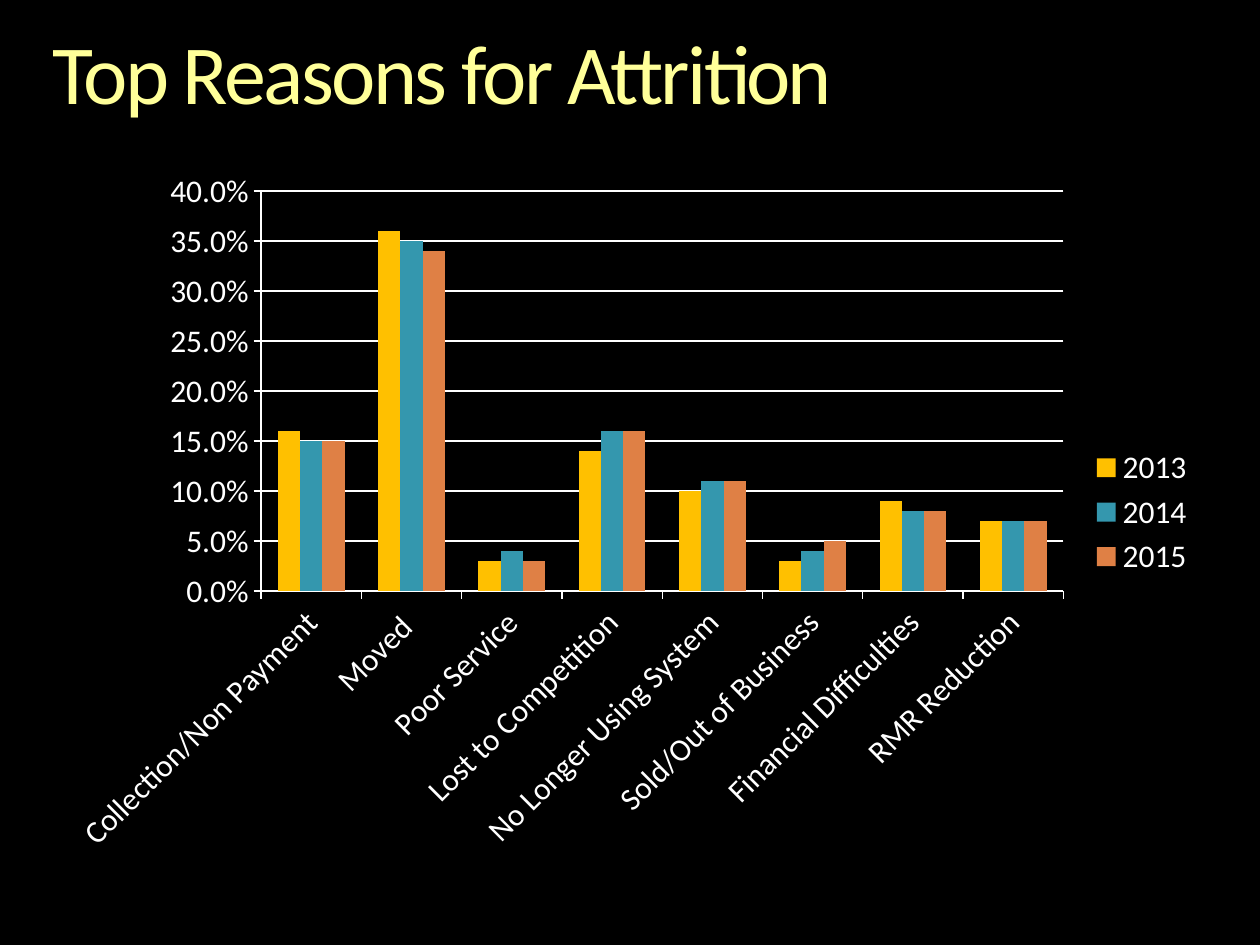
from dataclasses import dataclass

import pptx
import pptx.chart.data
import pptx.dml.color
import pptx.enum.chart
import pptx.oxml.ns
import pptx.util

Cm = pptx.util.Cm
Pt = pptx.util.Pt
RGBColor = pptx.dml.color.RGBColor

BLACK = RGBColor(0x00, 0x00, 0x00)
WHITE = RGBColor(0xFF, 0xFF, 0xFF)
PALE_YELLOW = RGBColor(0xFF, 0xFF, 0x99)
GOLD = RGBColor(0xFF, 0xC0, 0x00)
TEAL = RGBColor(0x34, 0x97, 0xAE)
ORANGE = RGBColor(0xDF, 0x80, 0x45)

FONT_NAME = "Calibri"
LEFT = Cm(1.06)
CONTENT_WIDTH = Cm(23.28)
PERCENT_FORMAT = "0.0%"


@dataclass(frozen=True)
class YearSeries:
    year: str
    color: RGBColor
    shares: tuple[float, ...]


REASONS = (
    "Collection/Non Payment",
    "Moved ",
    "Poor Service",
    "Lost to Competition",
    "No Longer Using System",
    "Sold/Out of Business",
    "Financial Difficulties",
    "RMR Reduction",
)
YEARS = (
    YearSeries("2013", GOLD, (0.16, 0.36, 0.03, 0.14, 0.1, 0.03, 0.09, 0.07)),
    YearSeries("2014", TEAL, (0.15, 0.35, 0.04, 0.16, 0.11, 0.04, 0.08, 0.07)),
    YearSeries("2015", ORANGE, (0.15, 0.34, 0.03, 0.16, 0.11, 0.05, 0.08, 0.07)),
)


def add_text(slide, text: str, *, left, top, width, height, size, color: RGBColor,
             line_spacing: float = 1.0, character_spacing: float = 0) -> None:
    text_frame = slide.shapes.add_textbox(left, top, width, height).text_frame
    text_frame.word_wrap = True
    text_frame.margin_left = text_frame.margin_right = 0
    text_frame.margin_top = text_frame.margin_bottom = 0
    paragraph = text_frame.paragraphs[0]
    paragraph.line_spacing = line_spacing
    run = paragraph.add_run()
    run.text = text
    run.font.name = FONT_NAME
    run.font.size = size
    run.font.color.rgb = color
    run.font._element.set("spc", str(round(character_spacing * 100)))


def style_line(line) -> None:
    line.color.rgb = WHITE
    line.width = Pt(0.75)


def style_axis(axis) -> None:
    axis.major_tick_mark = pptx.enum.chart.XL_TICK_MARK.OUTSIDE
    axis.minor_tick_mark = pptx.enum.chart.XL_TICK_MARK.NONE
    style_line(axis.format.line)


def add_attrition_chart(slide, reasons: tuple[str, ...], years: tuple[YearSeries, ...]) -> None:
    data = pptx.chart.data.CategoryChartData(number_format=PERCENT_FORMAT)
    data.categories = reasons
    for year in years:
        data.add_series(year.year, year.shares)
    chart = slide.shapes.add_chart(
        pptx.enum.chart.XL_CHART_TYPE.COLUMN_CLUSTERED,
        LEFT, Cm(3.18), CONTENT_WIDTH, Cm(14.29), data,
    ).chart
    chart.has_title = False
    chart.font.name = FONT_NAME
    chart.font.size = Pt(18)
    chart.font.color.rgb = WHITE

    plot = chart.plots[0]
    plot.vary_by_categories = False
    plot.gap_width = 150
    plot.overlap = 0
    for series, year in zip(plot.series, years):
        series.format.fill.solid()
        series.format.fill.fore_color.rgb = year.color

    style_axis(chart.category_axis)
    category_font = chart.category_axis.tick_labels.font
    category_font.size = Pt(18)
    category_font.color.rgb = WHITE
    category_font.name = FONT_NAME
    body = chart.category_axis._element.find(".//" + pptx.oxml.ns.qn("a:bodyPr"))
    body.set("rot", str(-45 * 60000))

    value_axis = chart.value_axis
    style_axis(value_axis)
    value_axis.minimum_scale = 0
    value_axis.maximum_scale = 0.4
    value_axis.major_unit = 0.05
    value_axis.tick_labels.number_format = PERCENT_FORMAT
    value_axis.tick_labels.number_format_is_linked = False
    value_axis.has_major_gridlines = True
    style_line(value_axis.major_gridlines.format.line)

    chart.has_legend = True
    chart.legend.position = pptx.enum.chart.XL_LEGEND_POSITION.RIGHT
    chart.legend.include_in_layout = False


def main() -> None:
    presentation = pptx.Presentation()
    presentation.slide_width = Cm(25.4)
    presentation.slide_height = Cm(19.05)
    slide = presentation.slides.add_slide(presentation.slide_layouts[6])
    slide.background.fill.solid()
    slide.background.fill.fore_color.rgb = BLACK
    add_text(
        slide, "Top Reasons for Attrition",
        left=LEFT, top=Cm(0.64), width=CONTENT_WIDTH, height=Cm(1.85),
        size=Pt(48), color=PALE_YELLOW, line_spacing=0.9, character_spacing=-1.5,
    )
    add_attrition_chart(slide, REASONS, YEARS)
    presentation.save("out.pptx")


if __name__ == "__main__":
    main()
